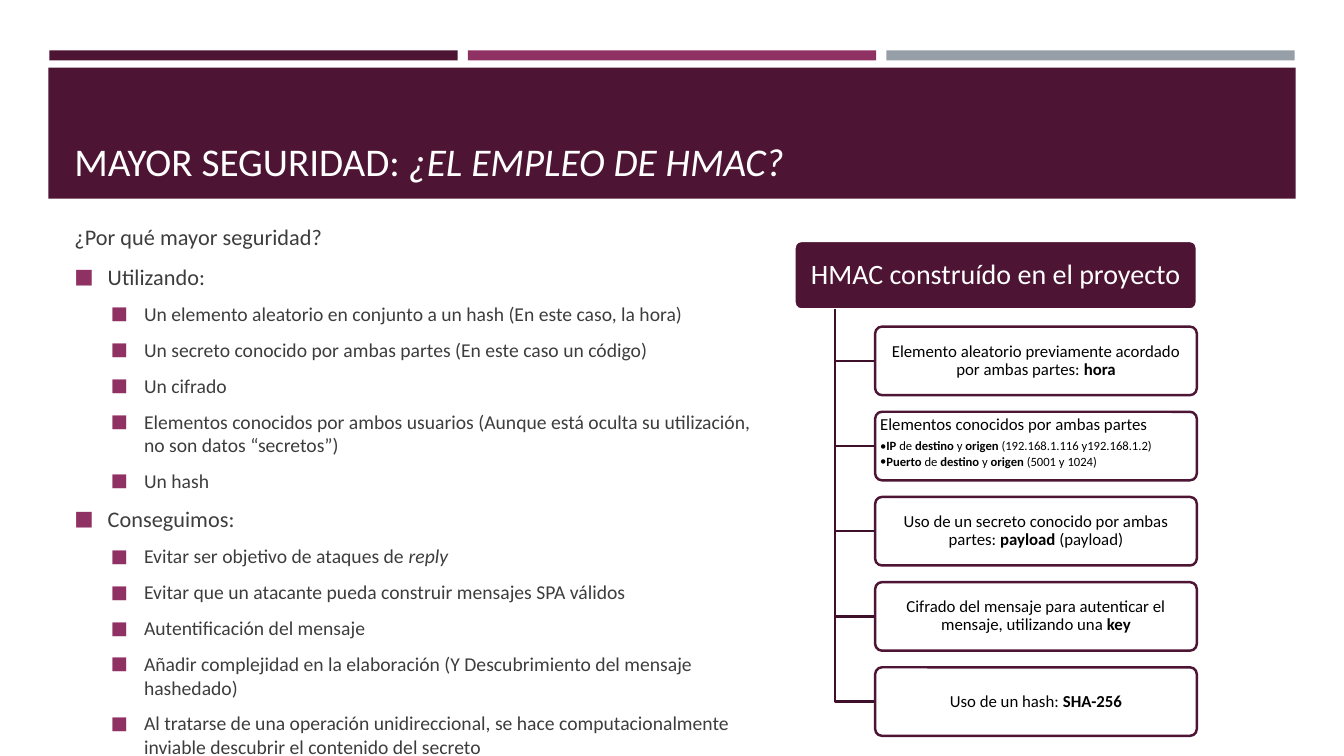
"""Build the HMAC security slide."""
from lxml import etree
from pptx import Presentation
from pptx.dml.color import RGBColor
from pptx.enum.shapes import MSO_SHAPE
from pptx.enum.text import MSO_ANCHOR, PP_ALIGN
from pptx.oxml.ns import qn
from pptx.util import Inches, Pt

RECT, ROUNDED = MSO_SHAPE.RECTANGLE, MSO_SHAPE.ROUNDED_RECTANGLE
TOP, MIDDLE, BOTTOM = MSO_ANCHOR.TOP, MSO_ANCHOR.MIDDLE, MSO_ANCHOR.BOTTOM
LEFT, CENTER = PP_ALIGN.LEFT, PP_ALIGN.CENTER

PLUM, MAGENTA, GREY, BRANCH = "4D1434", "903163", "969FA7", "3E102A"
WHITE, BLACK, TEXT = "FFFFFF", "000000", "3D3D3D"


def color(value):
    return RGBColor.from_string(value)


class SlideBuilder:
    font = "Calibri"
    line_width = Pt(1.75)

    def __init__(self, slide):
        self.slide = slide
        self.shapes = slide.shapes

    def finish(self, shape, fill, line):
        shape.shadow.inherit = False
        if fill:
            shape.fill.solid()
            shape.fill.fore_color.rgb = color(fill)
        else:
            shape.fill.background()
        if line:
            shape.line.color.rgb = color(line)
            shape.line.width = self.line_width
        else:
            shape.line.fill.background()

    def block(self, box, fill, line=None, kind=RECT):
        shape = self.shapes.add_shape(kind, *map(Inches, box))
        if kind == ROUNDED:
            shape.adjustments[0] = 0.1
        self.finish(shape, fill, line)
        return shape

    def branch(self, points):
        start, *rest = [(Inches(x), Inches(y)) for x, y in points]
        builder = self.shapes.build_freeform(*start)
        builder.add_line_segments(rest, close=False)
        self.finish(builder.convert_to_shape(), None, BRANCH)

    def frame(self, shape, anchor, insets=(0.1, 0.05, 0.1, 0.05)):
        frame = shape.text_frame
        sides = ("margin_left", "margin_top", "margin_right", "margin_bottom")
        layout = {"word_wrap": True, "vertical_anchor": anchor,
                  **dict(zip(sides, map(Inches, insets)))}
        for name, value in layout.items():
            setattr(frame, name, value)
        return frame

    def text_box(self, box, anchor, **options):
        return self.frame(self.shapes.add_textbox(*map(Inches, box)), anchor, **options)

    def paragraph(self, frame, text, size, ink, emphasis="bold", bullet=None, **spacing):
        """Add a paragraph whose |marked| parts are emphasised."""
        first = frame.paragraphs[0]
        paragraph = frame.add_paragraph() if first.runs else first
        for name, value in spacing.items():
            setattr(paragraph, name, value)
        for index, part in enumerate(text.split("|")):
            if part:
                run = paragraph.add_run()
                run.text = part
                style = {"name": self.font, "size": Pt(size), emphasis: index % 2 == 1}
                for name, value in style.items():
                    setattr(run.font, name, value)
                run.font.color.rgb = color(ink)
        if bullet:
            self.bullet(paragraph, **bullet)

    def bullet(self, paragraph, char, indent, hang, ink=None, percent=100):
        props = paragraph._p.get_or_add_pPr()
        props.set("marL", str(Inches(indent)))
        props.set("indent", str(-Inches(hang)))
        if ink:
            holder = etree.SubElement(props, qn("a:buClr"))
            etree.SubElement(holder, qn("a:srgbClr"), val=ink)
        etree.SubElement(props, qn("a:buSzPct"), val=str(percent * 1000))
        etree.SubElement(props, qn("a:buFont"), typeface=self.font)
        etree.SubElement(props, qn("a:buChar"), char=char)


REASONS = [
    (0, "¿Por qué mayor seguridad?"),
    (1, "Utilizando:"),
    (2, "Un elemento aleatorio en conjunto a un hash (En este caso, la hora)"),
    (2, "Un secreto conocido por ambas partes (En este caso un código)"),
    (2, "Un cifrado"),
    (2, "Elementos conocidos por ambos usuarios (Aunque está oculta su utilización, "
        "no son datos “secretos”)"),
    (2, "Un hash"),
    (1, "Conseguimos:"),
    (2, "Evitar ser objetivo de ataques de |reply|"),
    (2, "Evitar que un atacante pueda construir mensajes SPA válidos"),
    (2, "Autentificación del mensaje"),
    (2, "Añadir complejidad en la elaboración (Y Descubrimiento del mensaje hashedado)"),
    (2, "Al tratarse de una operación unidireccional, se hace computacionalmente "
        "inviable descubrir el contenido del secreto"),
]

HMAC_PARTS = [
    ("Elemento aleatorio previamente acordado por ambas partes: |hora|", []),
    ("Elementos conocidos por ambas partes", [
        "|IP| de |destino| y |origen |(192.168.1.116 y192.168.1.2)",
        "|Puerto| de |destino| y |origen |(5001 y 1024)"]),
    ("Uso de un secreto conocido por ambas partes: |payload |(payload)", []),
    ("Cifrado del mensaje para autenticar el mensaje, utilizando una |key|", []),
    ("Uso de un hash: |SHA-256|", []),
]


def add_header(page):
    for column, fill in enumerate((PLUM, MAGENTA, GREY)):
        page.block((0.49 + 4.15 * column, 0.5, 4.05, 0.1), fill)
    page.block((0.48, 0.67, 12.37, 1.3), PLUM)
    title = page.text_box((0.64, 0.77, 12.06, 1.11), BOTTOM)
    page.paragraph(title, "MAYOR SEGURIDAD: |¿EL EMPLEO DE HMAC?|", 28, WHITE, "italic")


def add_reasons(page):
    reasons = page.text_box((0.64, 2.57, 6.92, 5.05), MIDDLE, insets=(0.1, 0.05, 0.1, 0.5))
    indents = {1: 0.33, 2: 0.69}
    for level, text in REASONS:
        size = 14 if level == 2 else 15.9
        bullet = level and {"char": "■", "indent": indents[level], "hang": 0.33,
                            "ink": MAGENTA, "percent": 92}
        page.paragraph(reasons, text, size, TEXT, "italic", bullet,
                       space_before=Pt(0.2 * size), space_after=Pt(6))


def add_hmac_tree(page):
    root = page.block((7.88, 2.39, 3.99, 0.68), PLUM, WHITE, ROUNDED)
    page.paragraph(page.frame(root, MIDDLE, (0.04, 0.03, 0.04, 0.03)),
                   "HMAC construído en el proyecto", 20, WHITE,
                   alignment=CENTER, line_spacing=0.9, space_after=Pt(7))
    trunk, card_left, root_bottom, height = 8.28, 8.68, 3.07, 0.68
    for row, (text, details) in enumerate(HMAC_PARTS):
        top = 3.24 + 0.845 * row
        middle = top + height / 2
        page.branch([(trunk, root_bottom), (trunk, middle), (card_left, middle)])
        card = page.block((card_left, top, 3.19, height), WHITE, PLUM, ROUNDED)
        frame = page.frame(card, TOP if details else MIDDLE, (0.03, 0.02, 0.03, 0.02))
        page.paragraph(frame, text, 12, BLACK, alignment=LEFT if details else CENTER,
                       line_spacing=0.9, space_after=Pt(4.2))
        for detail in details:
            page.paragraph(frame, detail, 9, BLACK,
                           bullet={"char": "•", "indent": 0.06, "hang": 0.06},
                           alignment=LEFT, line_spacing=0.9, space_after=Pt(1.35))


def main():
    deck = Presentation()
    deck.slide_width, deck.slide_height = Inches(13.33), Inches(7.5)
    page = SlideBuilder(deck.slides.add_slide(deck.slide_layouts[6]))
    add_header(page)
    add_hmac_tree(page)
    add_reasons(page)
    deck.save("out.pptx")


if __name__ == "__main__":
    main()
